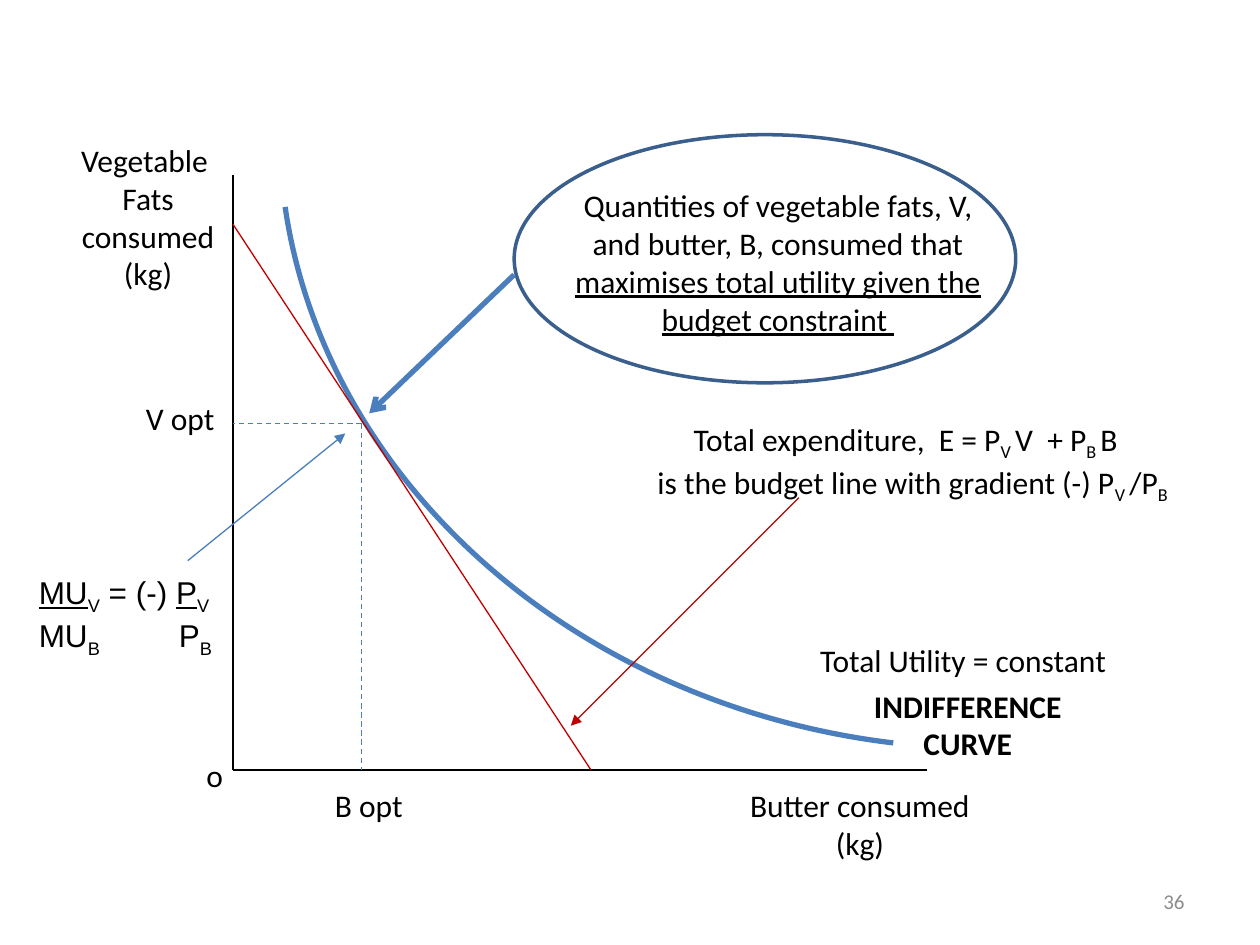
from pptx import Presentation
from pptx.dml.color import RGBColor
from pptx.enum.dml import MSO_LINE as Dash
from pptx.enum.shapes import MSO_CONNECTOR as Conn, MSO_SHAPE as Form
from pptx.enum.text import MSO_ANCHOR as Anchor, PP_ALIGN as Align
from pptx.oxml.ns import qn
from pptx.util import Pt
from lxml.etree import SubElement as Sub

HUES = {"ink": "000000", "blue": "4B7EBC", "navy": "3A5F8C",
        "red": "C00000", "grey": "8C8C8C"}
SIDES = {"l": Align.LEFT, "c": Align.CENTER, "r": Align.RIGHT}


class Board:
    """Text style and the current slide; all lengths in points."""

    def __init__(self, slide, font="Calibri", size=18):
        self.shapes = slide.shapes
        self.font, self.size = font, size

    def hue(self, name):
        return RGBColor.from_string(HUES[name])

    def text(self, x, y, w, h, paras, side="l", font=None, size=None,
             hue="ink", wrap=False, indents=(), tab=None):
        """Each paragraph is a list of (text, marks): b bold, u underline, s subscript."""
        frame = self.shapes.add_textbox(Pt(x), Pt(y), Pt(w), Pt(h)).text_frame
        frame.word_wrap = wrap
        frame.vertical_anchor = Anchor.MIDDLE if side == "r" else Anchor.TOP
        for i, runs in enumerate(paras):
            para = frame.paragraphs[0] if i == 0 else frame.add_paragraph()
            para.alignment = SIDES[side]
            props = para._p.get_or_add_pPr()
            if indents:
                props.set("marL", str(Pt(indents[i])))
            if tab:
                stops = Sub(props, qn("a:tabLst"))
                Sub(stops, qn("a:tab"), pos=str(Pt(tab)), algn="l")
            for words, marks in runs:
                run = para.add_run()
                run.text = words
                face = run.font
                face.name, face.size = font or self.font, Pt(size or self.size)
                face.color.rgb = self.hue(hue)
                face.bold = "b" in marks
                face.underline = "u" in marks
                if "s" in marks:
                    run._r.get_or_add_rPr().set("baseline", "-25000")

    def label(self, x, y, w, h, *lines, side="c", marks="", wrap=False):
        self.text(x, y, w, h, [[(line, marks)] for line in lines], side, wrap=wrap)

    def line(self, start, end, hue="ink", width=0.75, dash=False, head=None):
        link = self.shapes.add_connector(
            Conn.STRAIGHT, *[Pt(v) for v in (*start, *end)])
        link.line.color.rgb = self.hue(hue)
        link.line.width = Pt(width)
        if dash:
            link.line.dash_style = Dash.DASH
        if head:
            Sub(link.line._get_or_add_ln(), qn("a:tailEnd"), type=head)
        Sub(link._element.spPr, qn("a:effectLst"))

    def shape(self, form, x, y, w, h, hue, width):
        item = self.shapes.add_shape(form, Pt(x), Pt(y), Pt(w), Pt(h))
        item.shadow.inherit = False
        item.fill.background()
        item.line.color.rgb = self.hue(hue)
        item.line.width = Pt(width)
        return item

    def arc(self, x, y, w, h, turn, start, end, hue, width):
        item = self.shape(Form.ARC, x, y, w, h, hue, width)
        item.adjustments[0], item.adjustments[1] = start, end
        item.rotation = turn


def main():
    deck = Presentation()
    deck.slide_width, deck.slide_height = Pt(720), Pt(540)
    board = Board(deck.slides.add_slide(deck.slide_layouts[6]))
    left, base = 133.2, 440
    best = (206.6, 242)

    # Slide number
    board.text(516, 500.5, 168, 28.75, [[("36", "")]], "r", size=12, hue="grey", wrap=True)

    # Axes
    board.line((left, 100), (left, base))
    board.line((left, base), (530, base))

    # Indifference curve
    board.arc(159.1, -254.9, 783.4, 681.8, 186.8, 162, 209.07, "blue", 3)

    # Axis and curve labels
    board.label(420.5, 445.7, 141.8, 51, "Butter consumed", "(kg)")
    board.label(25.2, 77, 118.8, 94.3, "Vegetable ", "Fats", "consumed", "(kg)", wrap=True)
    board.label(110.9, 428.4, 24.5, 29, "o", side="l")
    board.label(461.5, 362.9, 183.6, 29, "Total Utility = constant", side="l")
    board.label(491.8, 388.8, 122.4, 51, "INDIFFERENCE", "CURVE", marks="b")

    # Budget line and its pointer
    board.line((left, 128.2), (337.7, base), "red")
    board.line((456.5, 284.4), (326.2, 414.7), "red", head="triangle")

    # Optimum
    for foot in ((left, best[1]), (best[0], base)):
        board.line(best, foot, "blue", dash=True)
    board.label(76.3, 224.6, 54, 29, "V opt", side="l")
    board.label(184.3, 445.7, 54, 29, "B opt", side="l")

    # Ratio of marginal utilities
    board.text(15.1, 324, 122.4, 51, [
        [("MU", "u"), ("V", "s"), (" = (-) ", ""), ("P", "u"), ("V", "s")],
        [("MU", ""), ("B", "s"), ("\tP", ""), ("B", "s")],
    ], font="Arial", tab=80)
    board.line((107.3, 320.4), (197.3, 247.7), "blue", head="triangle")

    # Budget equation
    board.text(331.2, 236.2, 368.6, 72.7, [
        [("Total expenditure,  E = P", ""), ("V ", "s"), ("V  + P", ""),
         ("B ", "s"), ("B ", "")],
        [("is the budget line with gradient (-) P", ""), ("V ", "s"),
         ("/P", ""), ("B", "s")],
    ], "c", wrap=True, indents=(8, 12))

    # Callout on the optimum
    board.shape(Form.OVAL, 293.8, 77, 286.6, 141.8, "navy", 2)
    board.text(319.7, 103, 249.8, 94.3, [[
        ("Quantities of vegetable fats, V, and butter, B, consumed that ", ""),
        ("maximises total utility given the budget constraint ", "u"),
    ]], "c", wrap=True)
    board.line((293.8, 157), (211, 236.2), "blue", 3, head="arrow")

    deck.save("out.pptx")


if __name__ == "__main__":
    main()
